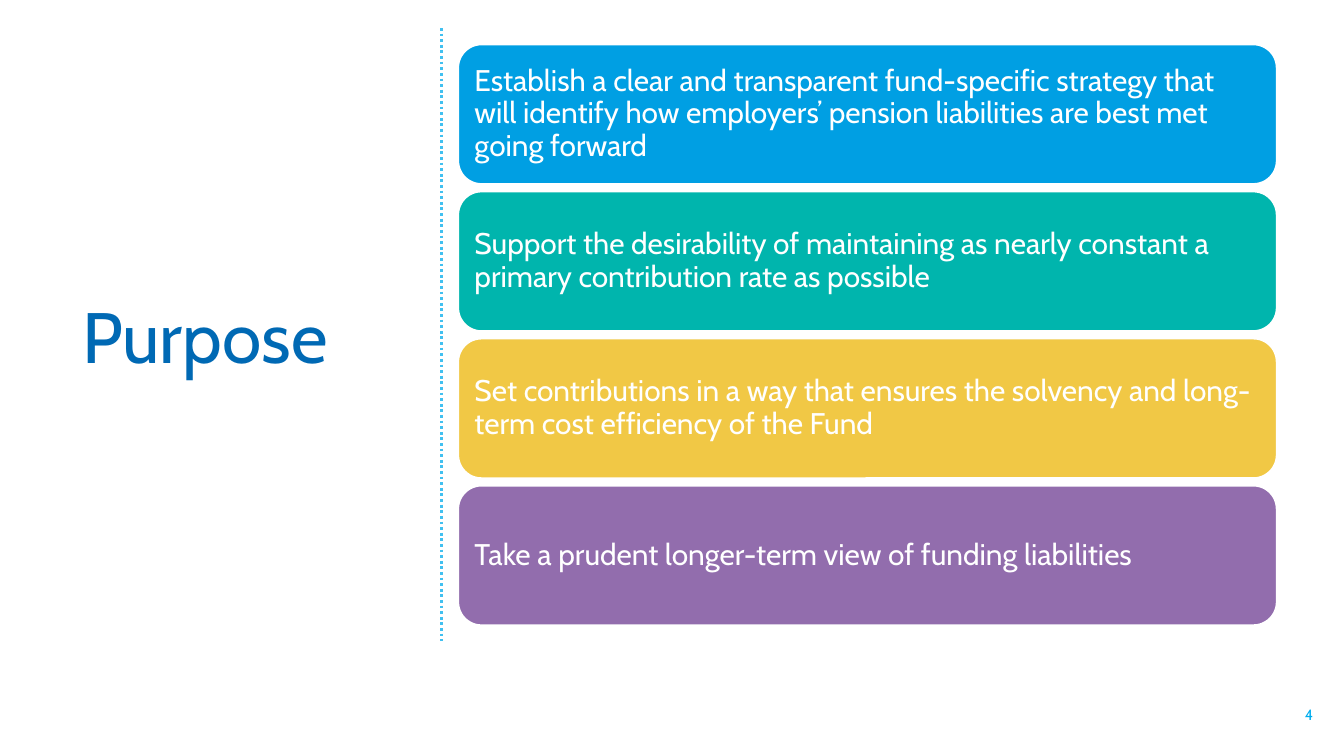
"""Build the Purpose slide: a title beside four coloured cards."""
from dataclasses import dataclass

from lxml import etree
from pptx import Presentation
from pptx.dml.color import RGBColor
from pptx.enum.dml import MSO_LINE
from pptx.enum.shapes import MSO_CONNECTOR, MSO_SHAPE
from pptx.enum.text import MSO_ANCHOR, MSO_AUTO_SIZE, PP_ALIGN
from pptx.oxml.ns import qn
from pptx.slide import Slide
from pptx.text.text import TextFrame
from pptx.util import Cm, Pt

ROUND = MSO_SHAPE.ROUNDED_RECTANGLE
STRAIGHT = MSO_CONNECTOR.STRAIGHT
DOTS = MSO_LINE.ROUND_DOT
MIDDLE = MSO_ANCHOR.MIDDLE
FIXED = MSO_AUTO_SIZE.NONE
LEFT, RIGHT = PP_ALIGN.LEFT, PP_ALIGN.RIGHT
FONT = "Cabin"
COLOURS = {
    "white": "FFFFFF",
    "title": "0069B4",
    "rule": "41C0F0",
    "number": "00ADEE",
    "blue": "009FE3",
    "teal": "00B5AD",
    "yellow": "F1C845",
    "purple": "926DAD",
}
CARD_TOP, CARD_STEP = 0.84, 2.78


@dataclass
class Card:
    """Wording and fill colour of one card."""

    text: str
    fill: str


CARDS = [
    Card("Establish a clear and transparent fund-specific strategy that will identify "
         "how employers’ pension liabilities are best met going forward", "blue"),
    Card("Support the desirability of maintaining as nearly constant a primary "
         "contribution rate as possible", "teal"),
    Card("Set contributions in a way that ensures the solvency and long-term cost "
         "efficiency of the Fund", "yellow"),
    Card("Take a prudent longer-term view of funding liabilities", "purple"),
]


def colour(name: str) -> RGBColor:
    """Look up a colour by name."""
    return RGBColor.from_string(COLOURS[name])


def write(frame: TextFrame, text: str, size: float, ink: str, inset: tuple[float, float],
          align: PP_ALIGN = LEFT, lines: float = 1.0) -> None:
    """Fill a frame with one centred-height paragraph."""
    frame.word_wrap = True
    frame.auto_size = FIXED
    frame.vertical_anchor = MIDDLE
    frame.margin_left = frame.margin_right = Cm(inset[0])
    frame.margin_top = frame.margin_bottom = Cm(inset[1])
    frame.text = text
    para = frame.paragraphs[0]
    para.alignment = align
    para.line_spacing = lines
    para.space_before = Pt(0)
    para.font.name = FONT
    para.font.size = Pt(size)
    para.font.bold = False
    para.font.color.rgb = colour(ink)


def add_rule(slide: Slide) -> None:
    """Draw the dotted upright rule."""
    rule = slide.shapes.add_connector(STRAIGHT, Cm(8.34), Cm(0.53), Cm(8.34), Cm(12.12))
    rule.line.color.rgb = colour("rule")
    rule.line.width = Pt(1.5)
    rule.line.dash_style = DOTS
    etree.SubElement(rule._element.spPr, qn("a:effectLst"))


def add_card(slide: Slide, card: Card, top: float) -> None:
    """Draw one rounded card with its text."""
    shape = slide.shapes.add_shape(ROUND, Cm(8.66), Cm(top), Cm(15.47), Cm(2.64))
    shape.shadow.inherit = False
    shape.fill.solid()
    shape.fill.fore_color.rgb = colour(card.fill)
    shape.line.color.rgb = colour("white")
    shape.line.width = Pt(1)
    write(shape.text_frame, card.text, 16, "white", (0.18, 0.18), lines=0.9)


def main() -> None:
    """Build and save the slide."""
    deck = Presentation()
    deck.slide_width, deck.slide_height = Cm(25.4), Cm(14.29)
    slide = deck.slides.add_slide(deck.slide_layouts[5])
    title = slide.shapes.title
    title.left, title.top, title.width, title.height = Cm(1.3), Cm(0.53), Cm(6.98), Cm(11.59)
    write(title.text_frame, "Purpose", 38.2, "title", (0.25, 0.13))
    add_rule(slide)
    for row, card in enumerate(CARDS):
        add_card(slide, card, CARD_TOP + row * CARD_STEP)
    number = slide.shapes.add_textbox(Cm(23.55), Cm(13.13), Cm(1.27), Cm(0.76))
    write(number.text_frame, "4", 8, "number", (0, 0), RIGHT)
    deck.save("out.pptx")


if __name__ == "__main__":
    main()
